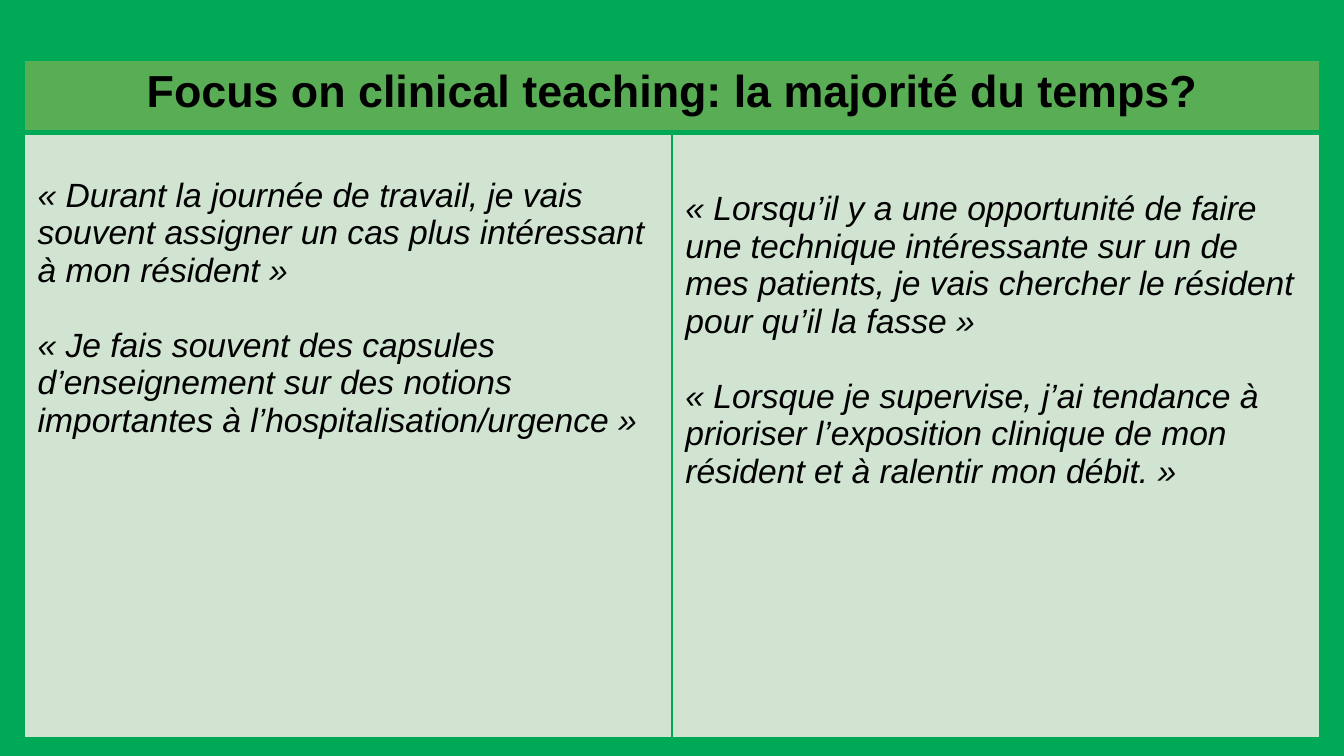
from lxml.etree import SubElement
from pptx import Presentation
from pptx.dml.color import RGBColor
from pptx.enum.text import PP_ALIGN as Align
from pptx.oxml.ns import qn
from pptx.util import Inches, Pt

COLORS = {"green": "00A955", "header": "59AD55", "body": "D1E3D1", "text": "000000"}
TITLE = "Focus on clinical teaching: la majorité du temps?"
QUOTE_COLUMNS = [
    [
        "«\u00a0Durant la journée de travail, je vais souvent assigner un cas plus "
        "intéressant à mon résident\u00a0»",
        "«\u00a0Je fais souvent des capsules d’enseignement sur des notions "
        "importantes à l’hospitalisation/urgence\u00a0»",
    ],
    [
        "«\u00a0Lorsqu’il y a une opportunité de faire une technique intéressante "
        "sur un de mes patients, je vais chercher le résident pour qu’il la fasse\u00a0»",
        "«\u00a0Lorsque je supervise, j’ai tendance à prioriser l’exposition clinique "
        "de mon résident et à ralentir mon débit.\u00a0»",
    ],
]
QUOTE_TOPS = [0.33, 0.43]  # inches above the first quote of each column


class SlideBuilder:
    font_name = "Arial"

    def __init__(self, deck):
        self.width, self.height = deck.slide_width, deck.slide_height
        self.slide = deck.slides.add_slide(deck.slide_layouts[6])

    def background(self, color):
        fill = self.slide.background.fill
        fill.solid()
        fill.fore_color.rgb = RGBColor.from_string(COLORS[color])

    def table(self, left, top, width, row_heights, columns):
        """Add a table; lengths are shares of the slide's size."""
        heights = [round(self.height * share) for share in row_heights]
        table = self.slide.shapes.add_table(
            len(heights), columns, round(self.width * left), round(self.height * top),
            round(self.width * width), sum(heights)).table
        for row, height in zip(table.rows, heights):
            row.height = height
        return table

    def cell(self, cell, fill, top_line=1, bottom_line=1):
        """Colour a cell and draw its borders, with line widths in points."""
        properties = cell._tc.get_or_add_tcPr()
        for side, points in zip("LRTB", (1, 1, top_line, bottom_line)):
            line = SubElement(properties, qn(f"a:ln{side}"), w=str(Pt(points)))
            solid = SubElement(line, qn("a:solidFill"))
            SubElement(solid, qn("a:srgbClr"), val=COLORS["green"])
        cell.fill.solid()
        cell.fill.fore_color.rgb = RGBColor.from_string(COLORS[fill])

    def text(self, cell, paragraphs, size, bold=False, italic=False,
             align=Align.LEFT, gap=0):
        """Fill a cell with paragraphs set apart by gap points."""
        frame = cell.text_frame
        frame.text = "\n".join(paragraphs)
        for index, paragraph in enumerate(frame.paragraphs):
            paragraph.alignment = align
            if index:
                paragraph.space_before = Pt(gap)
            font = paragraph.font
            font.name, font.size = self.font_name, Pt(size)
            font.bold, font.italic = bold, italic
            font.color.rgb = RGBColor.from_string(COLORS["text"])


def main():
    deck = Presentation()
    deck.slide_width = Inches(10)
    deck.slide_height = deck.slide_width * 9 // 16
    builder = SlideBuilder(deck)
    builder.background("green")

    quotes = builder.table(0.018, 0.08, 0.964, (0.095, 0.801), len(QUOTE_COLUMNS))
    header = quotes.cell(0, 0)
    header.merge(quotes.cell(0, 1))
    for column, (texts, top) in enumerate(zip(QUOTE_COLUMNS, QUOTE_TOPS)):
        builder.cell(quotes.cell(0, column), "header", bottom_line=3)
        body = quotes.cell(1, column)
        builder.cell(body, "body", top_line=3)
        body.margin_top = Inches(top)
        builder.text(body, texts, 18, italic=True, gap=20)
    builder.text(header, [TITLE], 24, bold=True, align=Align.CENTER)

    deck.save("out.pptx")


if __name__ == "__main__":
    main()
